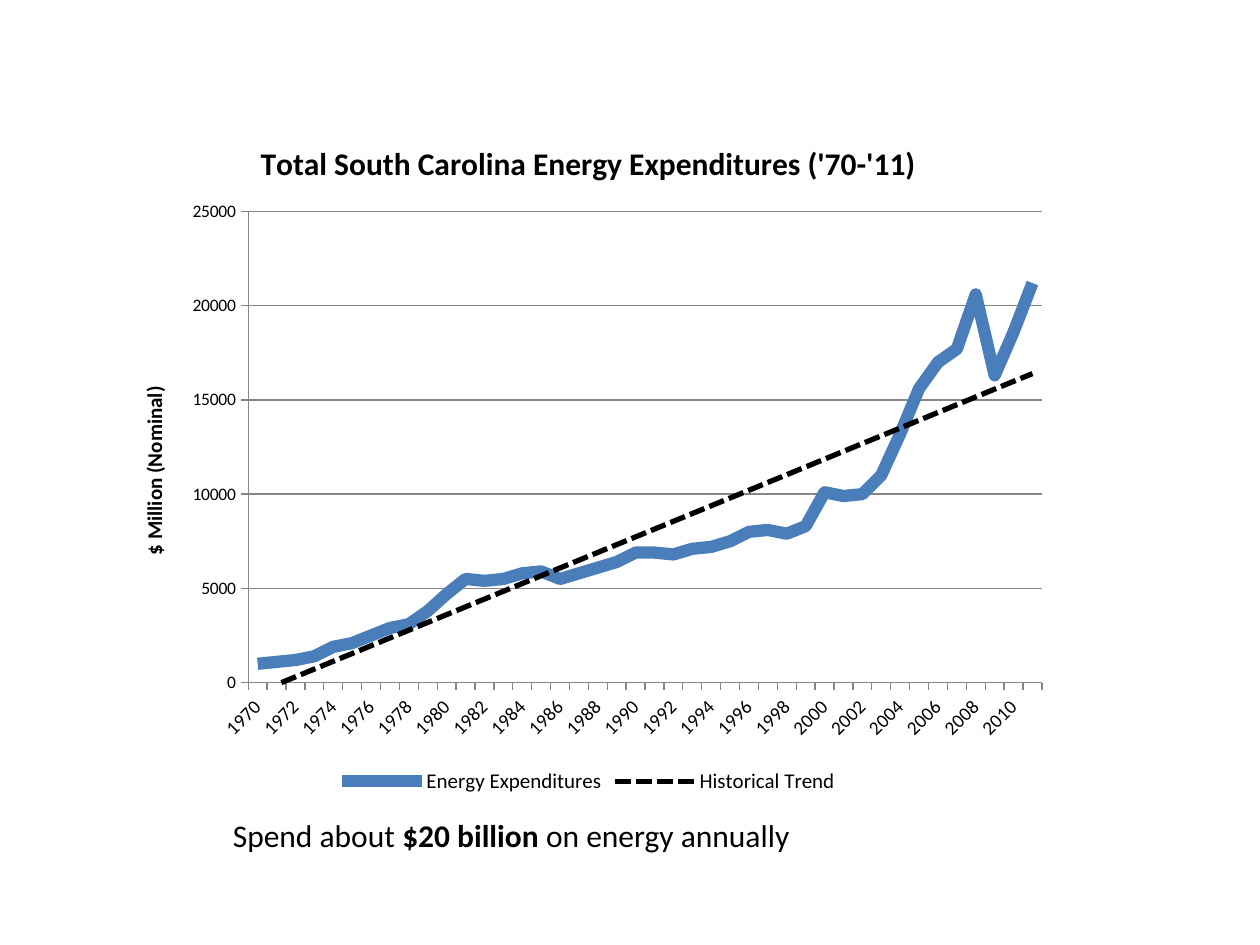
import lxml.etree
import pptx
import pptx.chart.data
import pptx.dml.color
import pptx.enum.chart
import pptx.oxml
import pptx.oxml.ns
import pptx.util
from pptx.util import Inches

COLORS = {"text": "000000", "series": "4A7EBB", "axis": "868686"}
FIRST_YEAR = 1970
EXPENDITURES = [
    1000, 1100, 1200, 1400, 1900, 2100, 2500, 2900, 3100, 3800,
    4700, 5500, 5400, 5500, 5800, 5900, 5500, 5800, 6100, 6400,
    6900, 6900, 6800, 7100, 7200, 7500, 8000, 8100, 7900, 8300,
    10100, 9900, 10000, 11000, 13200, 15600, 17000, 17700, 20600, 16300,
    18600, 21200,
]


class SlideBuilder:
    """Hold the style and the current slide, and add elements to it."""

    def __init__(self, presentation, font_name="Calibri"):
        self.font_name = font_name
        self.slide = presentation.slides.add_slide(presentation.slide_layouts[6])

    def style_font(self, font, size, bold=False):
        font.name = self.font_name
        font.size = pptx.util.Pt(size)
        font.bold = bold
        font.color.rgb = pptx.dml.color.RGBColor.from_string(COLORS["text"])

    def style_line(self, line, color, width):
        line.color.rgb = pptx.dml.color.RGBColor.from_string(COLORS[color])
        line.width = pptx.util.Pt(width)

    def add_title(self, owner, text, size):
        frame = (owner.chart_title if hasattr(owner, "chart_title") else owner.axis_title).text_frame
        frame.text = text
        self.style_font(frame.paragraphs[0].font, size, bold=True)

    def add_line_chart(self, title, value_title, name, categories, values, left, top, width, height):
        data = pptx.chart.data.CategoryChartData()
        data.categories = categories
        data.add_series(name, values)
        chart = self.slide.shapes.add_chart(
            pptx.enum.chart.XL_CHART_TYPE.LINE, left, top, width, height, data
        ).chart
        self.style_font(chart.font, 10)
        self.add_title(chart, title, 18)
        chart.has_legend = True
        chart.legend.position = pptx.enum.chart.XL_LEGEND_POSITION.BOTTOM
        chart.legend.include_in_layout = False
        self.style_font(chart.legend.font, 12)
        for axis, size in ((chart.category_axis, 11), (chart.value_axis, 10)):
            axis.major_tick_mark = pptx.enum.chart.XL_TICK_MARK.OUTSIDE
            axis.minor_tick_mark = pptx.enum.chart.XL_TICK_MARK.NONE
            self.style_line(axis.format.line, "axis", 0.75)
            self.style_font(axis.tick_labels.font, size)
        value_axis = chart.value_axis
        value_axis.minimum_scale, value_axis.maximum_scale = 0, 25000
        value_axis.major_unit = 5000
        value_axis.has_major_gridlines = True
        self.style_line(value_axis.major_gridlines.format.line, "axis", 0.75)
        self.add_title(value_axis, value_title, 12)
        chart.plots[0].vary_by_categories = False
        series = chart.plots[0].series[0]
        series.smooth = False
        series.marker.style = pptx.enum.chart.XL_MARKER_STYLE.NONE
        self.style_line(series.format.line, "series", 7)
        return chart

    def slant_category_labels(self, chart, degrees, skip):
        axis = chart.element.xpath(".//c:catAx")[0]
        axis.xpath("./c:txPr/a:bodyPr")[0].set("rot", str(degrees * 60000))
        label_skip = lxml.etree.Element(pptx.oxml.ns.qn("c:tickLblSkip"), val=str(skip))
        axis.xpath("./c:noMultiLvlLbl")[0].addprevious(label_skip)

    def add_trend_line(self, chart, name, width):
        trend_line = pptx.oxml.parse_xml(
            f'<c:trendline {pptx.oxml.ns.nsdecls("c", "a")}><c:name>{name}</c:name>'
            f'<c:spPr><a:ln w="{pptx.util.Pt(width)}"><a:solidFill>'
            f'<a:srgbClr val="{COLORS["text"]}"/></a:solidFill><a:prstDash val="sysDash"/></a:ln></c:spPr>'
            '<c:trendlineType val="linear"/><c:dispRSqr val="0"/><c:dispEq val="0"/></c:trendline>'
        )
        chart.element.xpath(".//c:ser/c:cat")[0].addprevious(trend_line)

    def place_plot(self, chart, left, top, width, height):
        plot_area = chart.element.xpath(".//c:plotArea")[0]
        for layout in plot_area.xpath("./c:layout"):
            plot_area.remove(layout)
        sizes = "".join(
            f'<c:{key} val="{value}"/>'
            for key, value in (("x", left), ("y", top), ("w", width), ("h", height))
        )
        plot_area.insert(0, pptx.oxml.parse_xml(
            f'<c:layout {pptx.oxml.ns.nsdecls("c")}><c:manualLayout><c:layoutTarget val="inner"/>'
            f'<c:xMode val="edge"/><c:yMode val="edge"/>{sizes}</c:manualLayout></c:layout>'
        ))

    def add_text(self, runs, size, left, top, width, height):
        frame = self.slide.shapes.add_textbox(left, top, width, height).text_frame
        frame.word_wrap = False
        paragraph = frame.paragraphs[0]
        self.style_font(paragraph.font, size)
        for text, bold in runs:
            run = paragraph.add_run()
            run.text = text
            run.font.bold = bold


def main():
    presentation = pptx.Presentation()
    presentation.slide_width, presentation.slide_height = Inches(10), Inches(7.5)
    builder = SlideBuilder(presentation)
    years = [str(FIRST_YEAR + offset) for offset in range(len(EXPENDITURES))]
    chart = builder.add_line_chart(
        "Total South Carolina Energy Expenditures ('70-'11)", "$ Million (Nominal)",
        "Energy Expenditures", years, EXPENDITURES,
        Inches(0.92), Inches(0.92), Inches(7.5), Inches(5.42),
    )
    builder.slant_category_labels(chart, -45, 2)
    builder.add_trend_line(chart, "Historical Trend", 3)
    builder.place_plot(chart, 0.14, 0.14, 0.84, 0.69)
    builder.add_text(
        [("Spend about ", False), ("$20 billion", True), (" on energy annually", False)],
        18, Inches(1.75), Inches(6.43), Inches(4.73), Inches(0.4),
    )
    presentation.save("out.pptx")


if __name__ == "__main__":
    main()
